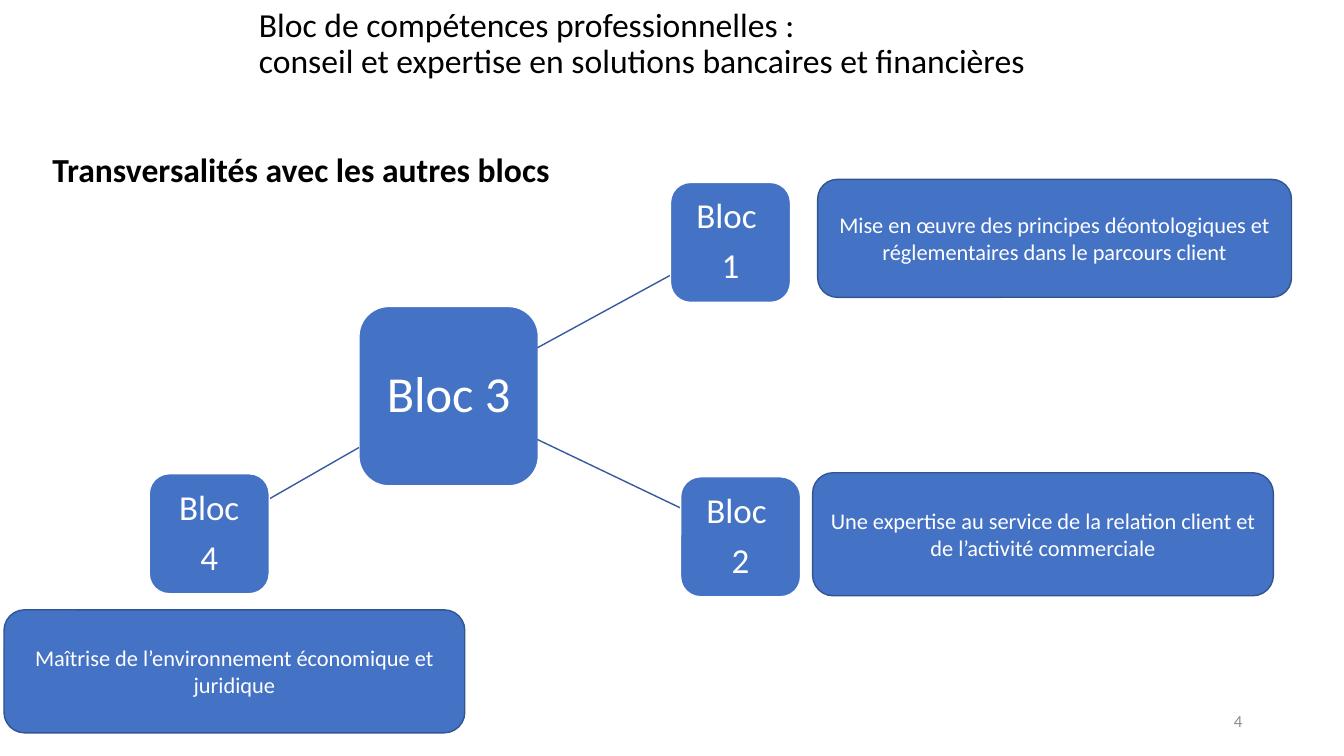
from dataclasses import dataclass

from lxml.etree import SubElement
from pptx import Presentation
from pptx.dml.color import RGBColor
from pptx.enum.shapes import MSO_CONNECTOR, MSO_SHAPE
from pptx.enum.text import MSO_ANCHOR, PP_ALIGN
from pptx.oxml.ns import qn
from pptx.util import Inches, Pt


@dataclass(frozen=True)
class Theme:
    font: str = "Calibri"
    black: str = "000000"
    white: str = "FFFFFF"
    grey: str = "8C8C8C"
    blue: str = "4472C4"
    outline: str = "325491"
    link: str = "365B9D"
    heading: int = 24
    centre: int = 36
    block: int = 25
    detail: int = 16
    number: int = 12


def set_all(target, values):
    for name, value in values.items():
        setattr(target, name, value)


class SlideBuilder:
    def __init__(self, page, theme):
        self.page = page
        self.theme = theme

    def fill_text(self, box, lines, size, color, bold=False, frame=None, **para_format):
        """Fill a shape with one paragraph per line."""
        text_frame = box.text_frame
        set_all(text_frame, {"word_wrap": True, **(frame or {})})
        for index, line in enumerate(lines):
            para = text_frame.add_paragraph() if index else text_frame.paragraphs[0]
            set_all(para, para_format)
            para.text = line
            for span in para.runs:
                set_all(span.font, {"name": self.theme.font, "size": Pt(size), "bold": bold})
                span.font.color.rgb = RGBColor.from_string(color)

    def text(self, place, line, size, color, **options):
        box = self.page.shapes.add_textbox(*map(Inches, place))
        self.fill_text(box, [line], size, color, **options)

    def card(self, place, lines, size, outline, **options):
        box = self.page.shapes.add_shape(MSO_SHAPE.ROUNDED_RECTANGLE, *map(Inches, place))
        box.shadow.inherit = False
        box.fill.solid()
        box.fill.fore_color.rgb = RGBColor.from_string(self.theme.blue)
        box.line.color.rgb = RGBColor.from_string(outline)
        box.line.width = Pt(1)
        options["frame"] = {"vertical_anchor": MSO_ANCHOR.MIDDLE, **options.get("frame", {})}
        self.fill_text(box, lines, size, self.theme.white, alignment=PP_ALIGN.CENTER, **options)

    def block(self, left, top, side, inset, lines, size):
        margin = Inches(inset)
        sides = ("left", "top", "right", "bottom")
        self.card((left, top, side, side), lines, size, self.theme.white,
                  frame={f"margin_{name}": margin for name in sides},
                  line_spacing=0.9, space_after=Pt(0.35 * size))

    def link(self, *ends):
        line = self.page.shapes.add_connector(MSO_CONNECTOR.STRAIGHT, *map(Inches, ends))
        line.line.color.rgb = RGBColor.from_string(self.theme.link)
        line.line.width = Pt(1)
        SubElement(line._element.spPr, qn("a:effectLst"))


def main():
    deck = Presentation()
    deck.slide_width, deck.slide_height = Inches(13.33), Inches(7.5)
    theme = Theme()
    builder = SlideBuilder(deck.slides.add_slide(deck.slide_layouts[6]), theme)

    # Title, subtitle and page number
    builder.text((2.47, 0.25, 12.28, 1.05),
                 "Bloc de compétences professionnelles : \v"
                 "conseil et expertise en solutions bancaires et financières",
                 theme.heading, theme.black, line_spacing=0.9,
                 frame={"vertical_anchor": MSO_ANCHOR.MIDDLE, "margin_bottom": Inches(0.72)})
    builder.text((0.42, 1.47, 12.02, 3.75), "Transversalités avec les autres blocs",
                 theme.heading, theme.black, bold=True, line_spacing=0.9, space_before=Pt(5))
    builder.text((9.42, 6.95, 3, 0.4), "4", theme.number, theme.grey,
                 alignment=PP_ALIGN.RIGHT, frame={"vertical_anchor": MSO_ANCHOR.MIDDLE})

    # Central block and its three linked blocks
    builder.block(3.56, 3.04, 1.78, 0.18, ["Bloc 3 "], theme.centre)
    linked_blocks = [
        (6.65, 1.81, ["Bloc ", "1"], (5.33, 3.45, 6.65, 2.73)),
        (6.75, 4.73, ["Bloc ", "2"], (5.33, 4.36, 6.75, 5.04)),
        (1.48, 4.7, ["Bloc", "4"], (3.56, 4.44, 2.67, 4.95)),
    ]
    for left, top, lines, ends in linked_blocks:
        builder.link(*ends)
        builder.block(left, top, 1.19, 0.13, lines, theme.block)

    # What each linked block brings
    details = [
        ((8.11, 1.78, 4.7, 1.17), "Mise en œuvre des principes déontologiques et "
                                  "réglementaires dans le parcours client"),
        ((8.06, 4.69, 4.57, 1.22), "Une expertise au service de la relation client "
                                   "et de l’activité commerciale"),
        ((0.04, 6.05, 4.57, 1.22), "Maîtrise de l’environnement économique et juridique"),
    ]
    for place, line in details:
        builder.card(place, [line], theme.detail, theme.outline)

    deck.save("out.pptx")


if __name__ == "__main__":
    main()
